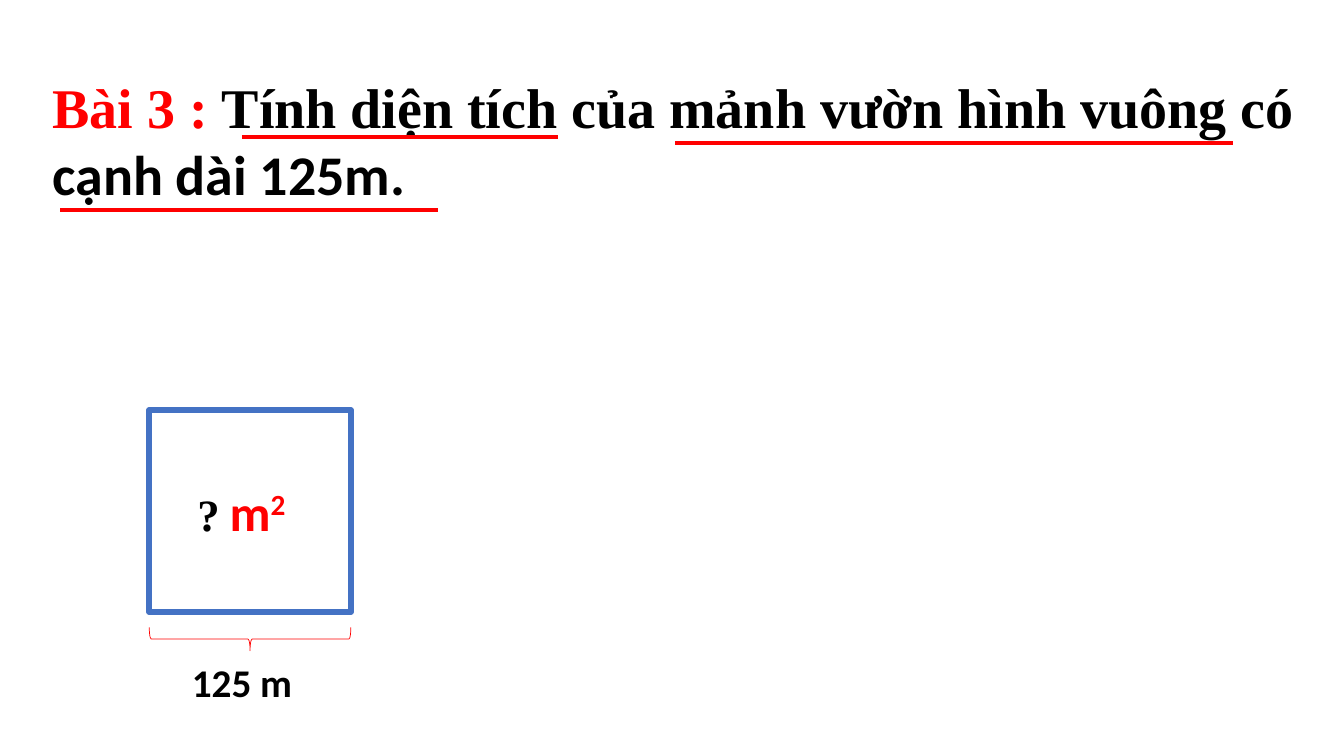
import dataclasses

import pptx
import pptx.dml.color
import pptx.enum.shapes
import pptx.enum.text
import pptx.oxml
import pptx.oxml.ns
import pptx.util

Pt = pptx.util.Pt
Shapes = pptx.enum.shapes.MSO_SHAPE
Align = pptx.enum.text.PP_ALIGN
Anchor = pptx.enum.text.MSO_ANCHOR


def color(value):
    return pptx.dml.color.RGBColor.from_string(value)


@dataclasses.dataclass(frozen=True)
class Theme:
    paper = color("FFFFFF")
    ink = color("000000")
    accent = color("FF0000")
    frame = color("4472C4")
    serif = "Times New Roman"
    sans = "Calibri"
    statement_size = 40
    unit_size = 36
    question_size = 32
    label_size = 28


THEME = Theme()


def add_span(para, text, size, font=THEME.sans, fill=THEME.ink, superscript=False):
    span = para.add_run()
    span.text = text
    span.font.name = font
    span.font.size = Pt(size)
    span.font.bold = True
    span.font.color.rgb = fill
    if superscript:
        span.font._element.set("baseline", "30000")


def prepare_text(box, align, anchor, left_margin=7.2):
    """Set up the text frame and return its first paragraph."""
    frame = box.text_frame
    frame.word_wrap = True
    frame.auto_size = pptx.enum.text.MSO_AUTO_SIZE.NONE
    frame.vertical_anchor = anchor
    frame.margin_left = Pt(left_margin)
    frame.margin_right = Pt(7.2)
    frame.margin_top = frame.margin_bottom = Pt(3.6)
    para = frame.paragraphs[0]
    para.alignment = align
    para.line_spacing = 1.0
    para.space_before = Pt(0)
    return para


def add_statement(page):
    title = page.shapes.title
    title.left, title.top, title.width, title.height = Pt(30.2), Pt(48.2), Pt(904.3), Pt(152)
    title.fill.solid()
    title.fill.fore_color.rgb = THEME.paper
    para = prepare_text(title, Align.LEFT, Anchor.TOP)
    size = THEME.statement_size
    add_span(para, "Bài 3 : ", size, font=THEME.serif, fill=THEME.accent)
    add_span(para, "Tính diện tích của mảnh vườn hình vuông có ", size, font=THEME.serif)
    add_span(para, "cạnh dài 125m.", size)


def add_underline(page, start, end, height):
    line = page.shapes.add_connector(
        pptx.enum.shapes.MSO_CONNECTOR.STRAIGHT, Pt(start), Pt(height), Pt(end), Pt(height))
    line.line.color.rgb = THEME.accent
    line.line.width = Pt(3)
    line._element.spPr.append(pptx.oxml.parse_xml(
        f"<a:effectLst {pptx.oxml.ns.nsdecls('a')}/>"))


def add_outline(page, kind, left, top, width, height, stroke, weight):
    shape = page.shapes.add_shape(kind, Pt(left), Pt(top), Pt(width), Pt(height))
    shape.shadow.inherit = False
    shape.fill.background()
    shape.line.color.rgb = stroke
    shape.line.width = Pt(weight)
    return shape


def add_garden(page, left, top, side):
    """Draw the square garden, the brace below it and the length of its side."""
    garden = add_outline(page, Shapes.RECTANGLE, left, top, side, side, THEME.frame, 4.5)
    garden.fill.solid()
    garden.fill.fore_color.rgb = THEME.paper
    para = prepare_text(garden, Align.LEFT, Anchor.MIDDLE, left_margin=34.4)
    add_span(para, "?", THEME.question_size, font=THEME.serif)
    add_span(para, " ", THEME.label_size, font=THEME.serif)
    add_span(para, "m", THEME.unit_size, fill=THEME.accent)
    add_span(para, "2", THEME.unit_size, fill=THEME.accent, superscript=True)

    depth = 16.6
    brace_middle = top + side + 19.5
    brace = add_outline(page, Shapes.RIGHT_BRACE, left + (side - depth) / 2,
                        brace_middle - side / 2, depth, side, THEME.accent, 0.5)
    brace.rotation = 90

    label = page.shapes.add_textbox(Pt(left), Pt(466.6), Pt(132.5), Pt(41))
    add_span(prepare_text(label, Align.CENTER, Anchor.TOP), "125 m", THEME.label_size)


def main():
    deck = pptx.Presentation()
    deck.slide_width, deck.slide_height = Pt(960), Pt(540)
    page = deck.slides.add_slide(deck.slide_layouts.get_by_name("Title Only"))
    add_statement(page)
    for start, end, height in ((482.4, 880.6, 102.2), (172.8, 398.9, 97.9), (43.2, 313.2, 149.8)):
        add_underline(page, start, end, height)
    add_garden(page, left=106.6, top=293, side=144)
    deck.save("out.pptx")


if __name__ == "__main__":
    main()
